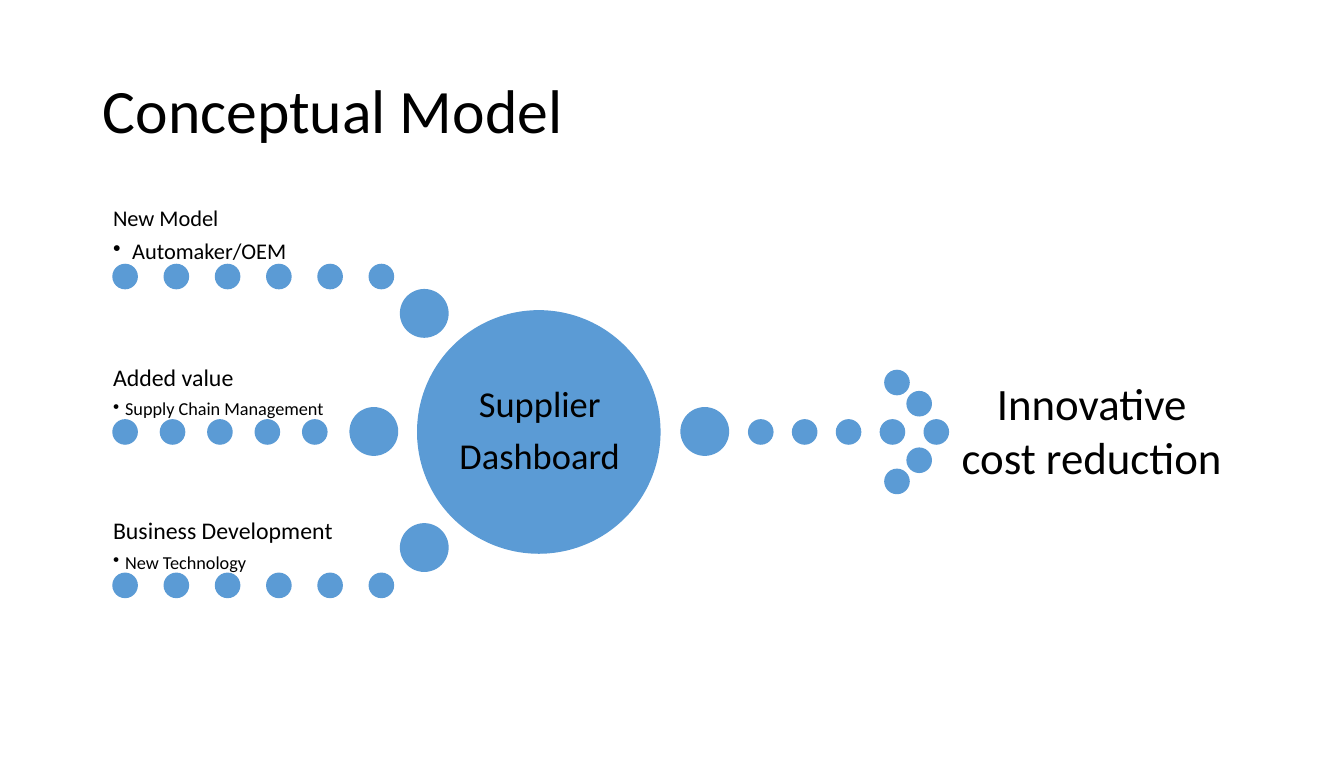
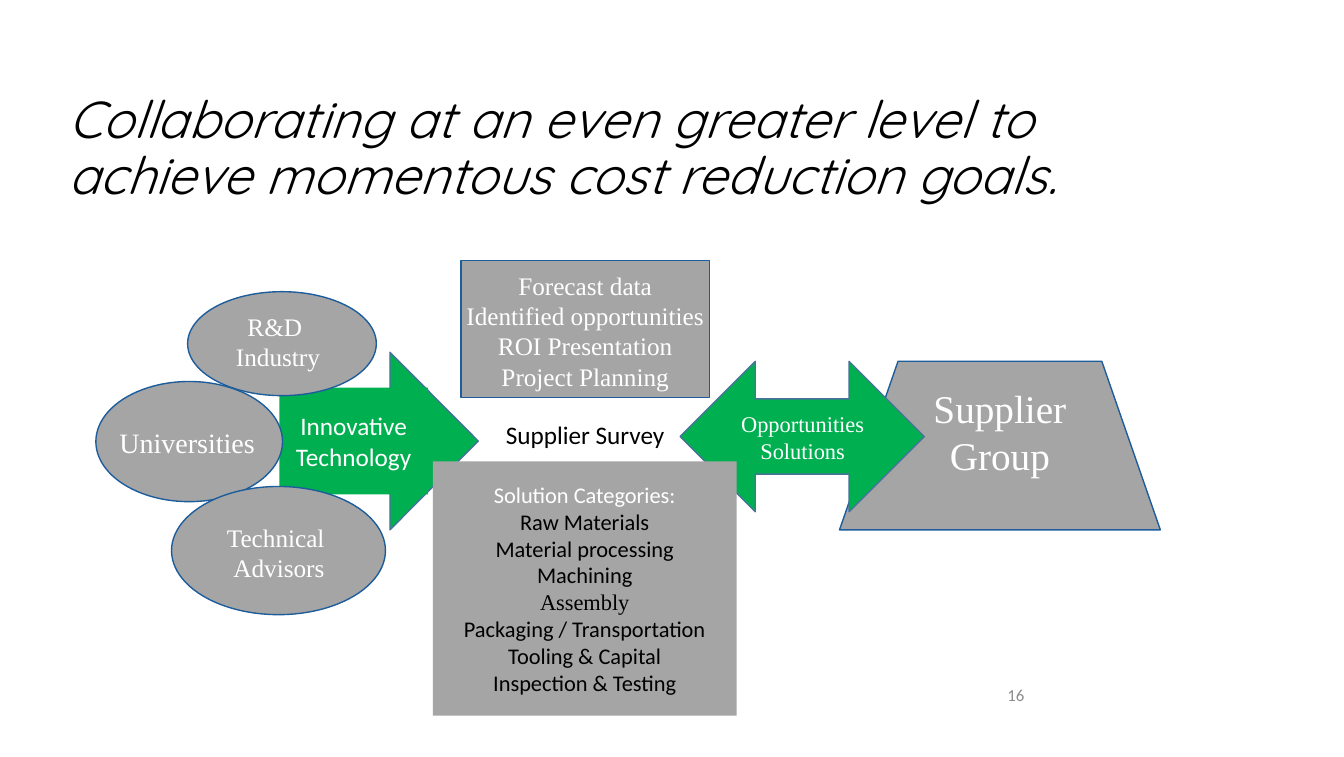
from pptx import Presentation
from pptx.dml.color import RGBColor
from pptx.enum.shapes import MSO_SHAPE
from pptx.enum.text import MSO_ANCHOR, PP_ALIGN
from pptx.oxml.ns import qn
from pptx.util import Inches, Pt
from lxml.etree import SubElement

COLORS = {
    "ink": "000000", "paper": "FFFFFF", "blue": "5B9BD5", "gray": "A5A5A5",
    "edge": "1E5D9B", "green": "00B050", "arrow_edge": "487399", "number": "8C8C8C",
}
SANS, SERIF, DISPLAY = "Calibri", "Times New Roman", "Quicksand"
SLIDE_SIZE = (13.32, 7.5)
TITLE_INSETS = (0.1, 0.05)
DOT, HUB_DOT = 0.24, 0.47


def rgb(name):
    return RGBColor.from_string(COLORS[name])


# Shared building blocks
def add_figure(slide, preset, box, fill, line=None):
    figure = slide.shapes.add_shape(preset, *map(Inches, box))
    figure.shadow.inherit = False
    figure.fill.solid()
    figure.fill.fore_color.rgb = rgb(fill)
    if line:
        figure.line.color.rgb = rgb(line)
        figure.line.width = Pt(1)
    else:
        figure.line.fill.background()
    return figure


def set_frame(frame, insets=(0.05, 0.05), anchor=MSO_ANCHOR.MIDDLE, wrap=True):
    frame.word_wrap = wrap
    frame.vertical_anchor = anchor
    frame.margin_left = frame.margin_right = Inches(insets[0])
    frame.margin_top = frame.margin_bottom = Inches(insets[1])


def write(frame, lines, size, color="ink", font=SANS, align=PP_ALIGN.CENTER,
          spacing=None, italic=False):
    """Write one paragraph per line; a line is text or (text, overrides)."""
    for index, line in enumerate(lines):
        text, own = (line, {}) if isinstance(line, str) else line
        paragraph = frame.paragraphs[0] if index == 0 else frame.add_paragraph()
        paragraph.alignment = align
        if spacing:
            paragraph.line_spacing = spacing
        run = paragraph.add_run()
        run.text = text
        run.font.size = Pt(own.get("size", size))
        run.font.name = own.get("font", font)
        run.font.italic = italic
        run.font.color.rgb = rgb(own.get("color", color))


def add_label(slide, box, lines, size, insets=(0.05, 0.05),
              anchor=MSO_ANCHOR.MIDDLE, wrap=True, **style):
    frame = slide.shapes.add_textbox(*map(Inches, box)).text_frame
    set_frame(frame, insets, anchor, wrap)
    write(frame, lines, size, **style)
    return frame


def add_title(slide, box, text, size, font=SANS, italic=False):
    add_label(slide, box, [text], size, TITLE_INSETS, font=font,
              align=PP_ALIGN.LEFT, spacing=0.9, italic=italic)


def add_bullet(paragraph, indent):
    props = paragraph._p.get_or_add_pPr()
    props.set("marL", str(Inches(indent)))
    props.set("indent", str(-Inches(indent)))
    SubElement(props, qn("a:buChar")).set("char", "•")


# Conceptual model
def add_dot(slide, left, top, size=DOT):
    add_figure(slide, MSO_SHAPE.OVAL, (left, top, size, size), "blue", "blue")


def add_dot_row(slide, first, last, top, count):
    for index in range(count):
        add_dot(slide, first + (last - first) * index / (count - 1), top)


def add_input(slide, box, heading, item, sizes, indent, last, count, hub_dot):
    """A heading and bullet on a dotted line that leads to the hub."""
    left, top, _, height = box
    frame = add_label(slide, box, [heading, (item, {"size": sizes[1]})], sizes[0],
                      (0, 0), MSO_ANCHOR.BOTTOM, align=PP_ALIGN.LEFT, spacing=0.9)
    frame.paragraphs[0].space_after = Pt(round(sizes[0] * 0.35))
    add_bullet(frame.paragraphs[1], indent)
    add_dot_row(slide, left, last, top + height, count)
    add_dot(slide, *hub_dot, HUB_DOT)


def add_hub(slide, box):
    left, top, width, height = box
    add_figure(slide, MSO_SHAPE.OVAL, box, "blue", "blue")
    frame = add_label(slide, (left + 0.36, top + 0.35, width - 0.7, height - 0.7),
                      ["Supplier", "Dashboard"], 26, (0.04, 0.04), spacing=0.9)
    frame.paragraphs[0].space_after = Pt(9)


def add_dotted_arrow(slide, left, top, tip):
    add_dot(slide, left, top - 0.12, HUB_DOT)
    add_dot_row(slide, left + 0.67, tip, top, 5)
    for back, rise in ((0.39, 0.49), (0.17, 0.28)):
        for side in (-1, 1):
            add_dot(slide, tip - back, top + side * rise)


def build_model(slide):
    add_title(slide, (0.92, 0.4, 11.49, 1.45), "Conceptual Model", 44)
    add_label(slide, (9.39, 3.67, 2.86, 1.18), ["Innovative cost reduction"], 32,
              TITLE_INSETS, MSO_ANCHOR.TOP)
    add_dotted_arrow(slide, 6.75, 4.16, 9.16)
    add_hub(slide, (4.14, 3.08, 2.4, 2.4))
    inputs = [
        (2.01, "New Model", "Automaker/OEM", (16, 16), 0.19, 3.66, 6, (3.97, 2.87)),
        (3.55, "Added value", "Supply Chain Management", (17, 13), 0.12, 3.0, 5,
         (3.47, 4.04)),
        (5.07, "Business Development", "New Technology", (17, 13), 0.12, 3.66, 6,
         (3.97, 5.19)),
    ]
    for top, *details in inputs:
        add_input(slide, (1.12, top, 2.78, 0.61), *details)


# Collaboration
def add_node(slide, preset, box, label_box, lines, size):
    """A gray figure with its label, placed relative to the figure."""
    add_figure(slide, preset, box, "gray", "edge")
    dx, dy, width, height = label_box
    add_label(slide, (box[0] + dx, box[1] + dy, width, height), lines, size,
              color="paper", font=SERIF)


def add_arrow(slide, preset, box, band, lines, size, font):
    """A green arrow with a text band laid over its shaft."""
    add_figure(slide, preset, box, "green", "arrow_edge")
    dx, dy, width, height = band
    panel = add_figure(slide, MSO_SHAPE.RECTANGLE,
                       (box[0] + dx, box[1] + dy, width, height), "green")
    set_frame(panel.text_frame)
    write(panel.text_frame, lines, size, "paper", font)


def add_supplier_group(slide, box):
    left, top, width, height = box
    inset = 0.58
    builder = slide.shapes.build_freeform(Inches(left), Inches(top + height))
    builder.add_line_segments([
        (Inches(x), Inches(y)) for x, y in (
            (left + inset, top), (left + width - inset, top),
            (left + width, top + height))], close=True)
    trapezoid = builder.convert_to_shape()
    trapezoid.shadow.inherit = False
    trapezoid.fill.solid()
    trapezoid.fill.fore_color.rgb = rgb("gray")
    trapezoid.line.color.rgb = rgb("edge")
    trapezoid.line.width = Pt(1)
    add_label(slide, (left + 0.39, top + 0.17, 2.4, 1.04), ["Supplier Group"], 28,
              color="paper", font=SERIF)


def add_categories(slide, box):
    panel = add_figure(slide, MSO_SHAPE.RECTANGLE, box, "gray")
    set_frame(panel.text_frame)
    write(panel.text_frame, [
        ("Solution Categories:", {"color": "paper"}), "Raw Materials",
        "Material processing", "Machining", ("Assembly", {"font": SERIF}),
        "Packaging / Transportation", "Tooling & Capital", "Inspection & Testing",
    ], 16)


def build_collaboration(slide):
    add_node(slide, MSO_SHAPE.RECTANGLE, (4.57, 2.58, 2.46, 1.36), (0, 0.04, 2.46, 1.31),
             ["Forecast data", "Identified opportunities", "ROI Presentation",
              "Project Planning"], 18)
    add_title(slide, (0.58, 0.53, 10.99, 1.91),
              "Collaborating at an even greater level to achieve momentous "
              "cost reduction goals.", 37, DISPLAY, italic=True)
    add_label(slide, (9.66, 6.76, 0.59, 0.25), ["16"], 12, TITLE_INSETS,
              color="number", align=PP_ALIGN.RIGHT)
    # Sources of technology
    add_arrow(slide, MSO_SHAPE.RIGHT_ARROW, (2.99, 3.49, 1.75, 1.76),
              (-0.22, 0.35, 1.47, 1.06), ["Innovative Technology"], 18, SANS)
    add_node(slide, MSO_SHAPE.OVAL, (1.86, 2.89, 1.87, 1.03), (0, 0.14, 1.79, 0.71),
             ["R&D ", "Industry"], 18)
    add_node(slide, MSO_SHAPE.OVAL, (0.95, 3.78, 1.85, 1.19), (-0.04, 0.38, 1.89, 0.44),
             ["Universities"], 20)
    # Exchange with suppliers
    add_supplier_group(slide, (8.32, 3.58, 3.18, 1.67))
    add_arrow(slide, MSO_SHAPE.LEFT_RIGHT_ARROW, (6.74, 3.58, 2.42, 1.49),
              (0.34, 0.43, 1.75, 0.64), ["Opportunities", "Solutions"], 16, SERIF)
    add_node(slide, MSO_SHAPE.OVAL, (1.7, 4.82, 2.12, 1.27), (0, 0.03, 2.13, 1.24),
             ["Technical ", "Advisors"], 18)
    # Survey and its categories
    add_categories(slide, (4.29, 4.57, 3.01, 2.52))
    add_label(slide, (4.9, 4.11, 1.8, 0.4), ["Supplier Survey"], 18, TITLE_INSETS,
              MSO_ANCHOR.TOP, wrap=False)


def main():
    deck = Presentation()
    deck.slide_width, deck.slide_height = map(Inches, SLIDE_SIZE)
    for build in (build_model, build_collaboration):
        build(deck.slides.add_slide(deck.slide_layouts[6]))
    deck.save("out.pptx")


if __name__ == "__main__":
    main()
